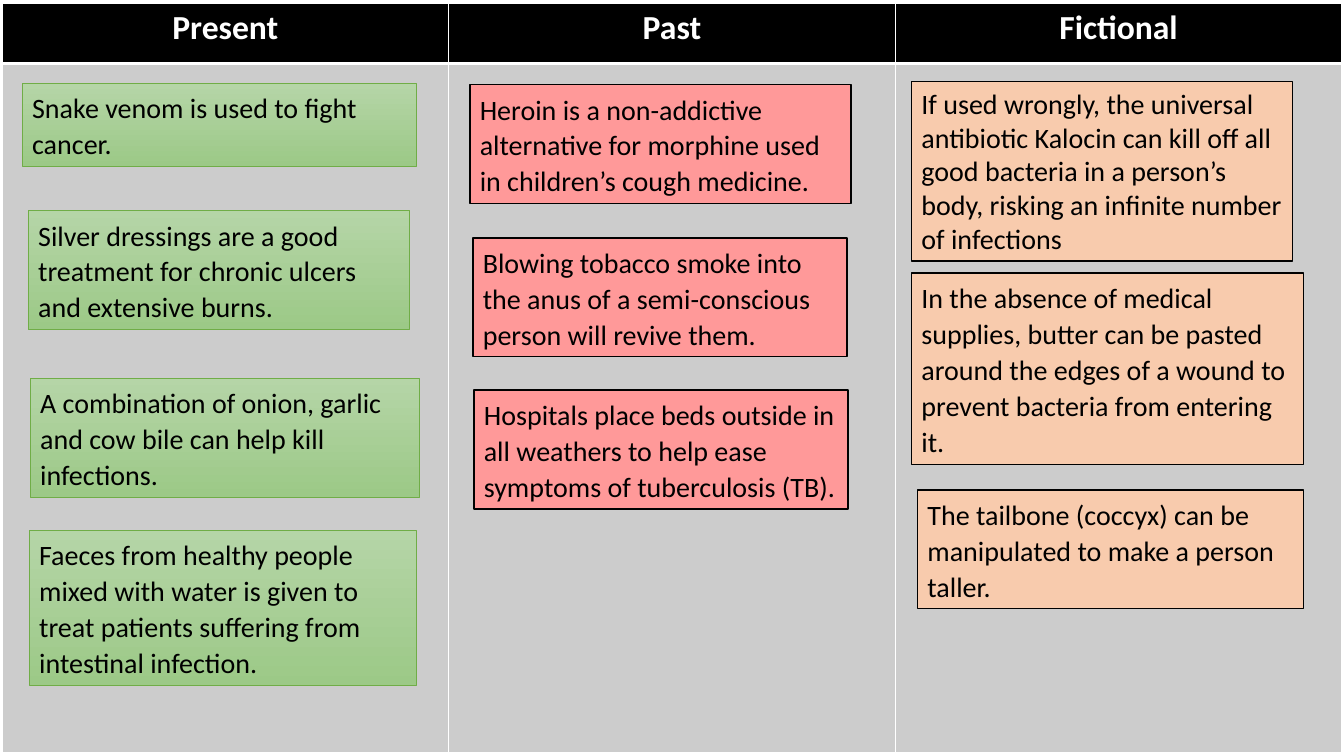
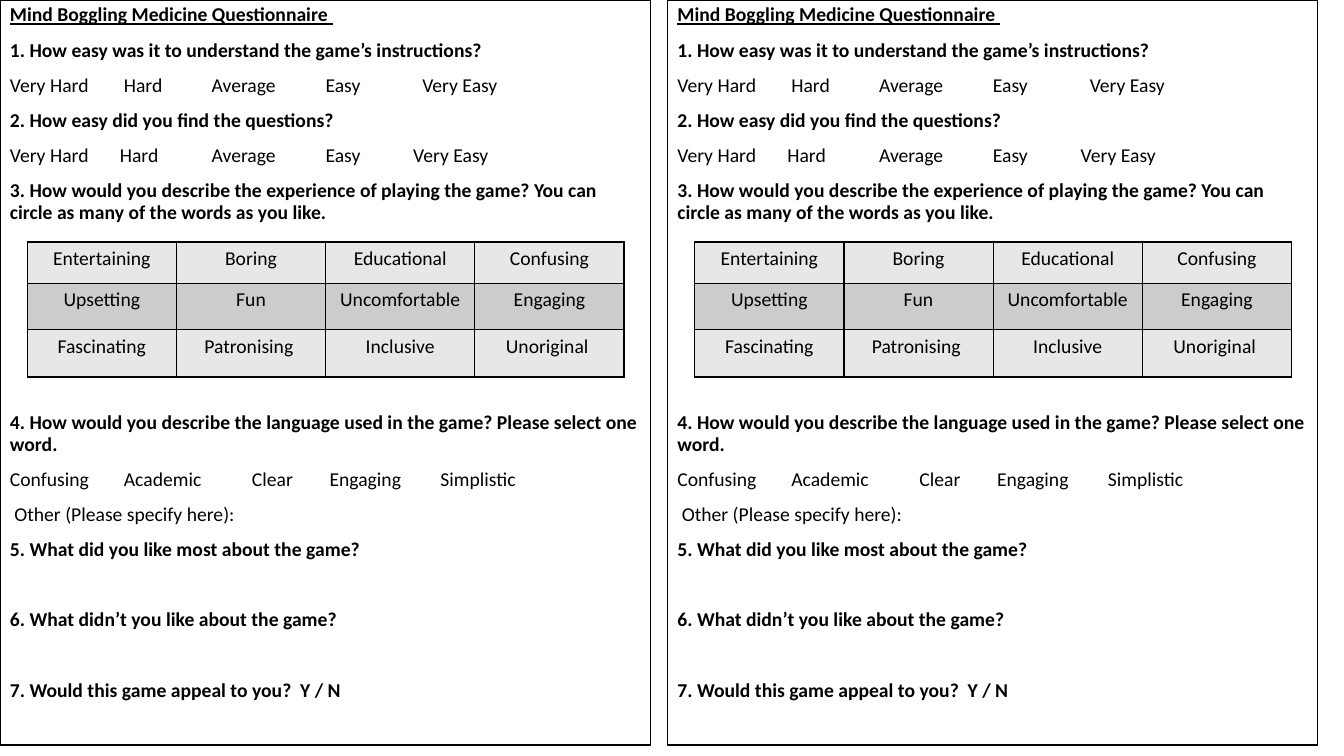
from lxml.etree import SubElement
from pptx import Presentation
from pptx.dml.color import RGBColor
from pptx.enum.shapes import MSO_SHAPE
from pptx.enum.text import MSO_ANCHOR, MSO_AUTO_SIZE, PP_ALIGN
from pptx.oxml import parse_xml
from pptx.oxml.ns import nsdecls, qn
from pptx.util import Inches, Pt

# Shared look
COLOURS = {
    "black": "000000", "white": "FFFFFF", "grey": "CCCCCC", "pale": "E7E7E7",
    "green_top": "B5D5A7", "green_bottom": "9CC987", "green_line": "70AD47",
    "red": "FF9999", "orange": "F8CBAD",
}
FONT = "Calibri"
HEADER = {"size": Pt(24), "bold": True}
STATEMENT = {"size": Pt(20)}
WORD = {"size": Pt(14)}
QUESTION = {"size": Pt(14), "bold": True}
TITLE = {**QUESTION, "underline": True}
FRAME = {"word_wrap": True, "vertical_anchor": MSO_ANCHOR.TOP}

# Statement cards: (fill colours, line colour, line width)
GREEN = (("green_top", "green_bottom"), "green_line", 0.5)
RED = (("red",), "black", 1)
ORANGE = (("orange",), "black", 1)
PLAIN = (("white",), "black", 1)

HEADINGS = ["Present", "Past", "Fictional"]
# (style, left, top, width, height, line spacing, text)
STATEMENTS = [
    (GREEN, 0.22, 0.83, 3.91, 0.82, 1.07, "Snake venom is used to fight cancer."),
    (GREEN, 0.28, 2.09, 3.78, 1.18, 1.07,
     "Silver dressings are a good treatment for chronic ulcers and extensive burns."),
    (GREEN, 0.3, 3.75, 3.86, 1.18, 1.07,
     "A combination of onion, garlic and cow bile can help kill infections."),
    (GREEN, 0.29, 5.26, 3.84, 1.54, 1.07,
     "Faeces from healthy people mixed with water is given to treat patients "
     "suffering from intestinal infection."),
    (RED, 4.66, 0.84, 3.78, 1.18, 1.07,
     "Heroin is a non-addictive alternative for morphine used in children’s "
     "cough medicine."),
    (RED, 4.69, 2.36, 3.71, 1.18, 1.07,
     "Blowing tobacco smoke into the anus of a semi-conscious person will "
     "revive them."),
    (RED, 4.7, 3.87, 3.71, 1.18, 1.07,
     "Hospitals place beds outside in all weathers to help ease symptoms of "
     "tuberculosis (TB)."),
    (ORANGE, 9.04, 0.81, 3.78, 1.78, 1,
     "If used wrongly, the universal antibiotic Kalocin can kill off all good "
     "bacteria in a person’s body, risking an infinite number of infections"),
    (ORANGE, 9.04, 2.71, 3.89, 1.9, 1.07,
     "In the absence of medical supplies, butter can be pasted around the "
     "edges of a wound to prevent bacteria from entering it."),
    (ORANGE, 9.1, 4.86, 3.83, 1.18, 1.07,
     "The tailbone (coccyx) can be manipulated to make a person taller."),
]

# (font format, space before in points, tab stops in inches, text)
QUESTIONS = [
    (TITLE, 0, [], "Mind Boggling Medicine Questionnaire "),
    (QUESTION, 10, [], "1. How easy was it to understand the game’s instructions?"),
    (WORD, 10, [1.13, 2, 3.13, 4.09], "Very Hard\tHard\tAverage\tEasy\tVery Easy"),
    (QUESTION, 10, [], "2. How easy did you find the questions?"),
    (WORD, 10, [1.09, 2, 3.13, 4], "Very Hard\tHard\tAverage\tEasy\tVery Easy"),
    (QUESTION, 10, [], "3. How would you describe the experience of playing the "
     "game? You can circle as many of the words as you like."),
    (QUESTION, 135.5, [], "4. How would you describe the language used in the game? "
     "Please select one word."),
    (WORD, 10, [1.13, 2.4, 3.17, 4.27],
     "Confusing\tAcademic\tClear\tEngaging\tSimplistic"),
    (WORD, 10, [], " Other (Please specify here):"),
    (QUESTION, 10, [], "5. What did you like most about the game?"),
    (QUESTION, 35, [], "6. What didn’t you like about the game?"),
    (QUESTION, 35, [], "7. Would this game appeal to you?  Y / N"),
]
WORDS = [
    ["Entertaining", "Boring", "Educational", "Confusing"],
    ["Upsetting", "Fun", "Uncomfortable", "Engaging"],
    ["Fascinating", "Patronising ", "Inclusive", "Unoriginal "],
]


def colour(name):
    return RGBColor.from_string(COLOURS[name])


def set_attributes(target, values):
    for name, value in values.items():
        setattr(target, name, value)


def write(paragraph, text, font_format, font_colour="black", **paragraph_format):
    set_attributes(paragraph, paragraph_format)
    run = paragraph.add_run()
    run.text = text
    set_attributes(run.font, {"name": FONT, **font_format})
    run.font.color.rgb = colour(font_colour)


def add_tab_stops(paragraph, stops):
    tab_list = SubElement(paragraph._p.get_or_add_pPr(), qn("a:tabLst"))
    for stop in stops:
        SubElement(tab_list, qn("a:tab"), pos=str(Inches(stop)), algn="l")


def add_box(slide, style, left, top, width, height):
    fills, line_colour, line_width = style
    shape = slide.shapes.add_shape(
        MSO_SHAPE.RECTANGLE, Inches(left), Inches(top), Inches(width), Inches(height))
    shape.shadow.inherit = False
    if len(fills) > 1:
        shape.fill.gradient()
        shape.fill.gradient_angle = 270
        for stop, (position, name) in zip(shape.fill.gradient_stops, enumerate(fills)):
            stop.position = position
            stop.color.rgb = colour(name)
    else:
        shape.fill.solid()
        shape.fill.fore_color.rgb = colour(fills[0])
    shape.line.color.rgb = colour(line_colour)
    shape.line.width = Pt(line_width)
    set_attributes(shape.text_frame, FRAME)
    return shape


def add_statement(slide, style, left, top, width, height, spacing, text):
    frame = add_box(slide, style, left, top, width, height).text_frame
    frame.auto_size = MSO_AUTO_SIZE.SHAPE_TO_FIT_TEXT
    write(frame.paragraphs[0], text, STATEMENT,
          alignment=PP_ALIGN.LEFT, line_spacing=spacing)


def set_borders(cell, name, widths):
    # Border elements come before the fill, in the order left, right, top, bottom
    properties = cell._tc.get_or_add_tcPr()
    for index, (side, width) in enumerate(zip("LRTB", widths)):
        properties.insert(index, parse_xml(
            f'<a:ln{side} {nsdecls("a")} w="{Pt(width)}"><a:solidFill>'
            f'<a:srgbClr val="{COLOURS[name]}"/></a:solidFill></a:ln{side}>'))


def add_grid(slide, left, top, column_width, row_heights, rows, fills,
             font_format, font_colour, border_colour, border_widths):
    columns = len(rows[0])
    table = slide.shapes.add_table(
        len(rows), columns, Inches(left), Inches(top),
        Inches(column_width * columns), Inches(sum(row_heights))).table
    for column in table.columns:
        column.width = Inches(column_width)
    for row, height, texts, fill, widths in zip(
            table.rows, row_heights, rows, fills, border_widths):
        row.height = Inches(height)
        for cell, text in zip(row.cells, texts):
            cell.fill.solid()
            cell.fill.fore_color.rgb = colour(fill)
            set_borders(cell, border_colour, widths)
            if text:
                write(cell.text_frame.paragraphs[0], text, font_format,
                      font_colour, alignment=PP_ALIGN.CENTER)


def add_questionnaire(slide, left):
    frame = add_box(slide, PLAIN, left, 0, 6.45, 7.39).text_frame
    for index, (font_format, before, stops, text) in enumerate(QUESTIONS):
        paragraph = frame.add_paragraph() if index else frame.paragraphs[0]
        write(paragraph, text, font_format, alignment=PP_ALIGN.LEFT,
              line_spacing=0.9, space_before=Pt(before))
        if stops:
            add_tab_stops(paragraph, stops)
    add_grid(slide, left + 0.27, 2.4, 1.48, [0.41, 0.46, 0.47], WORDS,
             ["pale", "grey", "pale"], WORD, "black", "black", [(1, 1, 1, 1)] * 3)


def main():
    presentation = Presentation()
    presentation.slide_width = Inches(13.33)
    presentation.slide_height = Inches(7.5)
    blank = presentation.slide_layouts[6]

    # Statements sorted into three columns
    slide = presentation.slides.add_slide(blank)
    add_grid(slide, 0.02, 0.03, 4.43, [0.6, 6.84], [HEADINGS, [""] * len(HEADINGS)],
             ["black", "grey"], HEADER, "white", "white",
             [(1, 1, 1, 3), (1, 1, 3, 1)])
    for statement in STATEMENTS:
        add_statement(slide, *statement)

    # Two questionnaires side by side
    slide = presentation.slides.add_slide(blank)
    for left in (0, 6.62):
        add_questionnaire(slide, left)

    presentation.save("out.pptx")


if __name__ == "__main__":
    main()
